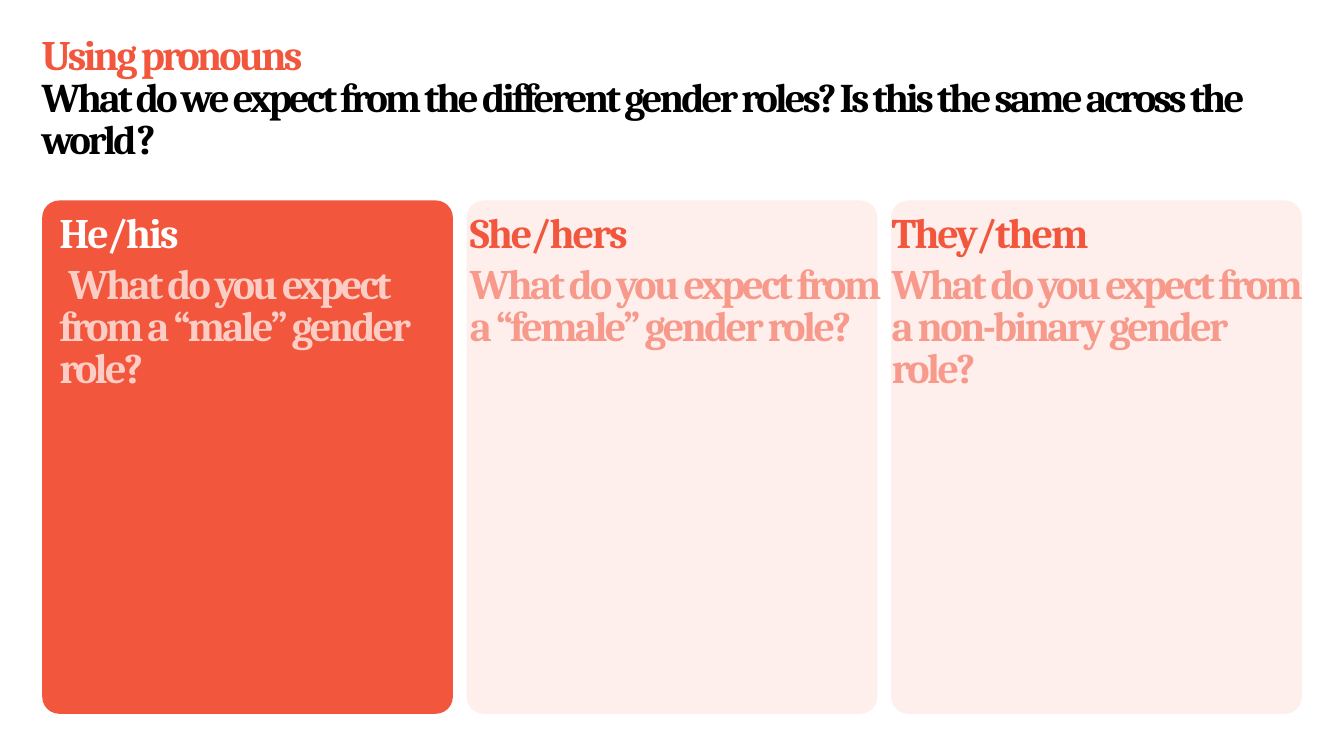
from pptx import Presentation
from pptx import util as u
from pptx.dml import color
from pptx.enum import shapes, text

COLORS = {
    "red": "F2573D",
    "blush": "FEEEEC",
    "salmon": "F79A8B",
    "pink": "FBCDC5",
    "white": "FFFFFF",
    "black": "000000",
}
FRAME = {
    "word_wrap": True,
    "auto_size": text.MSO_AUTO_SIZE.SHAPE_TO_FIT_TEXT,
    "vertical_anchor": text.MSO_ANCHOR.TOP,
    "margin_left": 0,
    "margin_top": u.Inches(0.15),
    "margin_right": 0,
    "margin_bottom": 0,
}
PARAGRAPH = {"alignment": text.PP_ALIGN.LEFT, "line_spacing": u.Pt(49.5)}
FONT = {"name": "Cambria", "bold": True}

CARD_TOP, CARD_WIDTH, CARD_HEIGHT = 3.28, 6.72, 8.4
CARD_LEFT, CARD_PITCH = 0.69, 6.945
CORNER_RADIUS = 0.28
CARDS = [
    ("He/his", "What do you expect from a “male” gender role?",
     "red", "white", "pink", 0.96, 6.45, 3.11, 0.15),
    ("She/hers", "What do you expect from a “female” gender role?",
     "blush", "red", "salmon", 7.68, 6.95, 2.41, 0),
    ("They/them", "What do you expect from a non-binary gender role?",
     "blush", "red", "salmon", 14.58, 6.95, 3.11, 0),
]


def apply(target, values):
    for name, value in values.items():
        setattr(target, name, value)


def rgb(name):
    return color.RGBColor.from_string(COLORS[name])


def add_text_frame(s, left, top, width, height):
    sp = s.shapes.add_textbox(*map(u.Inches, (left, top, width, height)))
    apply(sp.text_frame, FRAME)
    return sp.text_frame


def format_paragraph(p, space_before=0, first_indent=0):
    apply(p, {**PARAGRAPH, "space_before": u.Pt(space_before)})
    pPr = p._p.get_or_add_pPr()
    pPr.set("marL", str(u.Inches(0.01)))
    pPr.set("indent", str(u.Inches(first_indent)))


def add_run(p, words, fill, size, spacing):
    r = p.add_run()
    r.text = words
    apply(r.font, {**FONT, "size": u.Pt(size)})
    r.font.color.rgb = rgb(fill)
    r._r.get_or_add_rPr().set("spc", str(round(spacing * 100)))


def add_title(s):
    p = add_text_frame(s, 0.67, 0.45, 20.63, 2.26).paragraphs[0]
    format_paragraph(p)
    add_run(p, "Using pronouns", "red", 49.5, -3.4)
    p.add_line_break()
    add_run(p, "What do we expect from the different gender roles? "
               "Is this the same across the world", "black", 48, -3.4)
    add_run(p, "?", "black", 49.5, -3.4)


def add_card(s, left, fill):
    sp = s.shapes.add_shape(
        shapes.MSO_SHAPE.ROUNDED_RECTANGLE,
        *map(u.Inches, (left, CARD_TOP, CARD_WIDTH, CARD_HEIGHT)))
    sp.adjustments[0] = CORNER_RADIUS / CARD_WIDTH
    sp.shadow.inherit = False
    sp.fill.solid()
    sp.fill.fore_color.rgb = rgb(fill)
    sp.line.fill.background()


def add_card_text(s, heading, question, heading_fill, question_fill,
                  left, width, height, first_indent):
    tf = add_text_frame(s, left, 3.37, width, height)
    p = tf.paragraphs[0]
    format_paragraph(p)
    add_run(p, heading, heading_fill, 49.5, -2.4)
    p = tf.add_paragraph()
    format_paragraph(p, 10.8, first_indent)
    add_run(p, question, question_fill, 49.5, -3.1)


def main():
    prs = Presentation()
    apply(prs, {"slide_width": u.Inches(21.99), "slide_height": u.Inches(12.37)})
    s = prs.slides.add_slide(prs.slide_layouts[6])
    add_title(s)
    for i, (heading, question, fill, *text_format) in enumerate(CARDS):
        add_card(s, CARD_LEFT + i * CARD_PITCH, fill)
        add_card_text(s, heading, question, *text_format)
    prs.save("out.pptx")


if __name__ == "__main__":
    main()
